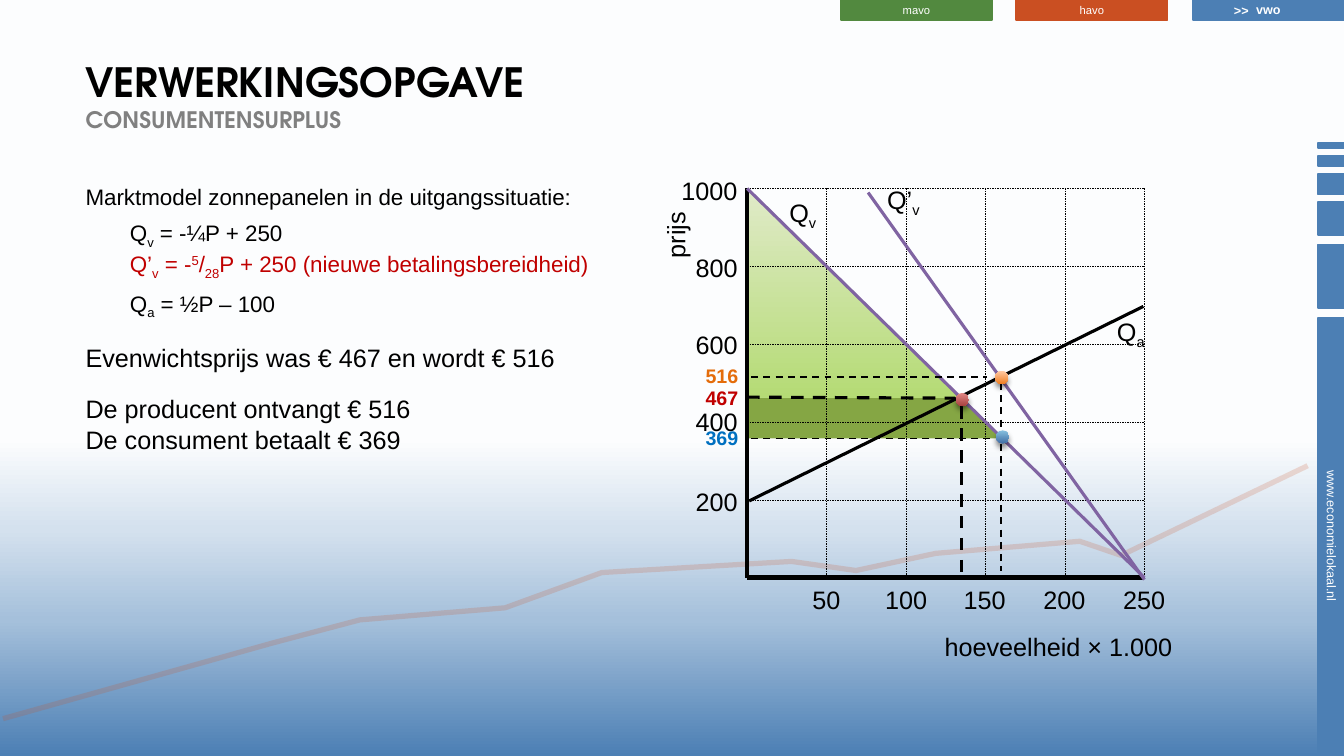
from copy import deepcopy
from dataclasses import dataclass

from lxml.etree import SubElement
from pptx import Presentation
from pptx.dml.color import RGBColor
from pptx.enum.dml import MSO_LINE
from pptx.enum.shapes import MSO_CONNECTOR, MSO_SHAPE
from pptx.enum.text import MSO_ANCHOR as Anchor, MSO_AUTO_SIZE as AutoSize, PP_ALIGN as Align
from pptx.oxml.ns import qn
from pptx.util import Emu, Pt

PX = 9144  # EMU per px, 100 px to the inch


@dataclass(frozen=True)
class Theme:
    font: str = "Arial"
    title_font: str = "TeX Gyre Adventor"
    black: str = "000000"
    white: str = "FFFFFF"
    grey: str = "808080"
    blue: str = "4C7FB4"
    orange: str = "CA4F22"
    green: str = "52893F"
    purple: str = "8064A2"
    red: str = "C00000"
    price_orange: str = "E46C0A"
    price_blue: str = "0070C0"
    band: str = "85A644"
    title: float = 28.8
    subtitle: float = 16.2
    large: float = 18
    body: float = 16
    price: float = 14
    tab: float = 9
    small_tab: float = 8


T = Theme()
SKY = [(0, T.blue), (18, "A5C0DB"), (30, "D4E1EE"), (42, "FCFDFE"), (50, T.white)]


@dataclass(frozen=True)
class Span:
    text: str
    base: int = 0  # sub- or superscript in percent


@dataclass(frozen=True)
class Para:
    spans: list[Span]
    size: float = T.body
    before: float = 3.2
    indent: int = 0
    red_from: int = 99  # spans from here on are red


@dataclass(frozen=True)
class Tab:
    name: str
    left: int
    color: str
    size: float = T.small_tab
    bold: bool = False


@dataclass(frozen=True)
class Line:
    ends: tuple[float, float, float, float]
    width: float
    color: str = T.black
    dash: bool = False


@dataclass(frozen=True)
class Dot:
    left: int
    top: int
    light: str
    dark: str


def rgb(color: str) -> RGBColor:
    return RGBColor.from_string(color)


def write(p, text: str, *, size: float, color: str = T.black, font: str = T.font,
          bold: bool = False, base: int = 0) -> None:
    """Add a run; each newline in it becomes a line break of the same format."""
    for i, piece in enumerate(text.split("\n")):
        if i:
            p.add_line_break()
            p._p[-1].append(deepcopy(r._r.rPr))
        if piece:
            r = p.add_run()
            r.text = piece
            r.font.size, r.font.name, r.font.bold = Pt(size), font, bold
            r.font.color.rgb = rgb(color)
            if base:
                r._r.get_or_add_rPr().set("baseline", str(base * 1000))


def label(sl, box: tuple[int, int, int, int], spans: list[Span], *, size: float = T.large,
          color: str = T.black, bold: bool = False, rotation: int = 0) -> None:
    sp = sl.shapes.add_textbox(*(Emu(v * PX) for v in box))
    sp.rotation = rotation
    tf = sp.text_frame
    tf.word_wrap, tf.auto_size = False, AutoSize.SHAPE_TO_FIT_TEXT
    for s in spans:
        write(tf.paragraphs[0], s.text, size=size, color=color, bold=bold, base=s.base)


def gradient(fill, element, stops: list[tuple[int, str]], angle: int) -> None:
    fill.gradient()
    fill.gradient_angle = angle
    stop_list = next(element.iter(qn("a:gsLst")))
    for old in list(stop_list):
        stop_list.remove(old)
    for pos, color in stops:
        gs = SubElement(stop_list, qn("a:gs"), pos=str(pos * 1000))
        SubElement(gs, qn("a:srgbClr"), val=color)


def bar(sl, box: tuple[int, int, int, int], color: str, text: str = "", *,
        size: float = T.tab, bold: bool = False, rotation: int = 0) -> None:
    sp = sl.shapes.add_shape(MSO_SHAPE.RECTANGLE, *(Emu(v * PX) for v in box))
    sp.rotation, sp.shadow.inherit = rotation, False
    sp.fill.solid()
    sp.fill.fore_color.rgb = sp.line.color.rgb = rgb(color)
    sp.line.width = Pt(1.25)
    tf = sp.text_frame
    tf.vertical_anchor = Anchor.MIDDLE
    tf.margin_top, tf.margin_bottom = 0, PX
    tf.paragraphs[0].alignment = Align.CENTER
    write(tf.paragraphs[0], text, size=size, color=T.white, bold=bold)


def freeform(sl, points: list[tuple[int, int]], close: bool):
    fb = sl.shapes.build_freeform(*points[0], scale=PX)
    fb.add_line_segments(points[1:], close=close)
    sp = fb.convert_to_shape()
    sp.shadow.inherit = False
    return sp


def draw_line(sl, line: Line) -> None:
    cx = sl.shapes.add_connector(MSO_CONNECTOR.STRAIGHT, *(Emu(round(v * PX)) for v in line.ends))
    cx.line.width, cx.line.color.rgb = Pt(line.width), rgb(line.color)
    if line.dash:
        cx.line.dash_style = MSO_LINE.DASH
    SubElement(cx.element.spPr, qn("a:effectLst"))


def draw_dot(sl, dot: Dot) -> None:
    sp = sl.shapes.add_shape(MSO_SHAPE.OVAL, *(Emu(v * PX) for v in (dot.left, dot.top, 13, 13)))
    gradient(sp.fill, sp.element, [(0, dot.light), (100, dot.dark)], 270)
    sp.line.fill.background()
    sp.shadow.inherit = False
    shadow = SubElement(sp.element.spPr.find(qn("a:effectLst")), qn("a:outerShdw"),
                        blurRad=str(Pt(4)), dist=str(Pt(3)), dir="5400000", rotWithShape="0")
    clr = SubElement(shadow, qn("a:srgbClr"), val=T.black)
    SubElement(clr, qn("a:alpha"), val="46000")


def frame(sl) -> None:
    """Background, level tabs, side bars and trend line."""
    gradient(sl.background.fill, sl.element, SKY, 90)
    for centre, length, text in [(532, 433, "www.economielokaal.nl"), (274, 63, ""), (217, 33, ""),
                                 (183, 20, ""), (160, 10, ""), (144, 5, "")]:
        bar(sl, (1320 - length // 2, centre - 13, length, 26), T.blue, text, rotation=90)
    for t in [Tab("vwo", 1183, T.blue, T.tab, True), Tab("havo", 1008, T.orange),
              Tab("mavo", 834, T.green)]:
        bar(sl, (t.left, 0, 150, 20), t.color, t.name, size=t.size, bold=t.bold)
    label(sl, (1214, -2, 35, 25), [Span(">>")], size=T.tab, color=T.white, bold=True)
    trend = freeform(sl, [(1297, 462), (1112, 551), (1071, 537), (928, 549), (849, 566), (785, 557),
                          (597, 568), (501, 603), (357, 615), (270, 638), (3, 713)], False)
    trend.fill.background()
    trend.line.width, trend.line.color.rgb = Pt(3.75), rgb(T.orange)
    SubElement(next(trend.line._ln.iter(qn("a:srgbClr"))), qn("a:alpha"), val="19000")


def texts(sl) -> None:
    """Title and the text column."""
    title = sl.shapes.title
    title.left, title.top, title.width, title.height = (Emu(v * PX) for v in (75, 50, 1002, 89))
    tf = title.text_frame
    tf.auto_size, tf.vertical_anchor = AutoSize.NONE, Anchor.MIDDLE
    p = tf.paragraphs[0]
    p.alignment = Align.LEFT
    write(p, "VERWERKINGSOPGAVE\n", size=T.title, font=T.title_font, bold=True)
    write(p, "CONSUMENTENSURPLUS", size=T.subtitle, font=T.title_font, bold=True, color=T.grey)

    paras = [
        Para([Span("Marktmodel zonnepanelen in de uitgangssituatie:")], before=0),
        Para([Span("Q"), Span("v", -25), Span(" = -¼P + 250\n"), Span("Q’"), Span("v", -25),
              Span(" = -"), Span("5", 30), Span("/"), Span("28", -25),
              Span("P + 250 (nieuwe betalingsbereidheid)")], indent=44, red_from=3),
        Para([Span("Q"), Span("a", -25), Span(" = ½P – 100")], indent=44),
        Para([Span("Evenwichtsprijs was € 467 en wordt € 516")], T.large, 12),
        Para([Span("De producent ontvangt € 516\nDe consument betaalt € 369")], T.large, 12)]
    tf = sl.shapes.add_textbox(*(Emu(v * PX) for v in (75, 177, 540, 515))).text_frame
    tf.word_wrap = True
    for i, para in enumerate(paras):
        p = tf.add_paragraph() if i else tf.paragraphs[0]
        p.space_before, p.space_after = Pt(para.before), Pt(3.4)
        p._p.get_or_add_pPr().set("marL", str(para.indent * PX))
        for j, s in enumerate(para.spans):
            write(p, s.text, size=para.size, base=s.base,
                  color=T.red if j >= para.red_from else T.black)


def market(sl) -> None:
    """Market diagram: surplus areas, grid, curves, labels and equilibria."""
    left, top, right, bottom = 741, 187, 1135, 573
    xs = {q: left + (right - left) * q / 250 for q in range(0, 251, 50)}
    ys = {v: bottom - (bottom - top) * v / 1000 for v in range(0, 1001, 200)}

    gain = freeform(sl, [(741, 394), (955, 395), (994, 435), (742, 435)], True)
    gain.fill.solid()
    gain.fill.fore_color.rgb = rgb(T.band)
    surplus = freeform(sl, [(742, 189), (743, 394), (952, 395)], True)
    gradient(surplus.fill, surplus.element, [(0, "DFEAC7"), (100, "B5DB75")], 270)
    for sp in (gain, surplus):
        sp.line.fill.background()

    lines = [Line((left, top, left, bottom), 3), Line((right, bottom, left, bottom), 3)]
    lines += [Line((left, y, right, y), 0.25, dash=True) for v, y in ys.items() if v]
    lines += [Line((x, top, x, bottom), 0.25, dash=True) for q, x in xs.items() if q]
    lines += [Line((left, top, right, bottom), 2.25, T.purple),
              Line((861, 191, 1135, 575), 2.25, T.purple),
              Line((743, 497, 1134, 304), 2.25),
              Line((741, 394, 947, 395), 2.25, dash=True),
              Line((954, 403, 954, 573), 2.25, dash=True),
              Line((993, 380, 993, 566), 1.25, dash=True),
              Line((745, 374, 979, 374), 1.25, dash=True),
              Line((745, 435, 982, 435), 1.25, dash=True)]
    for line in lines:
        draw_line(sl, line)

    label(sl, (927, 621, 248, 40), [Span("hoeveelheid × 1.000")])
    label(sl, (637, 213, 66, 40), [Span("prijs")], rotation=270)
    for price, y in {200: 478, 400: 398, 600: 322, 800: 245, 1000: 169}.items():
        width = 20 + 14 * len(str(price))
        label(sl, (742 - width, y, width, 40), [Span(str(price))])
    for q in list(xs)[1:]:
        width = 20 + 14 * len(str(q))
        label(sl, (round(xs[q] - width / 2), 575, width, 40), [Span(str(q))])
    for box, name, sub in [((773, 191, 48, 40), "Q", "v"), ((1098, 309, 49, 40), "Q", "a"),
                           ((870, 178, 54, 40), "Q’", "v")]:
        label(sl, box, [Span(name), Span(sub, -25)])
    for price, y, color in [("467", 378, T.red), ("516", 356, T.price_orange),
                            ("369", 418, T.price_blue)]:
        label(sl, (690, y, 53, 34), [Span(price)], size=T.price, color=color, bold=True)
    for dot in [Dot(948, 390, "E18785", "A7423F"), Dot(987, 368, "FFC9A4", "EE7E22"),
                Dot(988, 427, "86C0DF", "416EA4")]:
        draw_dot(sl, dot)


def main() -> None:
    prs = Presentation()
    prs.slide_width, prs.slide_height = Emu(1333 * PX), Emu(750 * PX)
    sl = prs.slides.add_slide(prs.slide_layouts[5])
    frame(sl)
    texts(sl)
    market(sl)
    prs.save("out.pptx")


if __name__ == "__main__":
    main()
